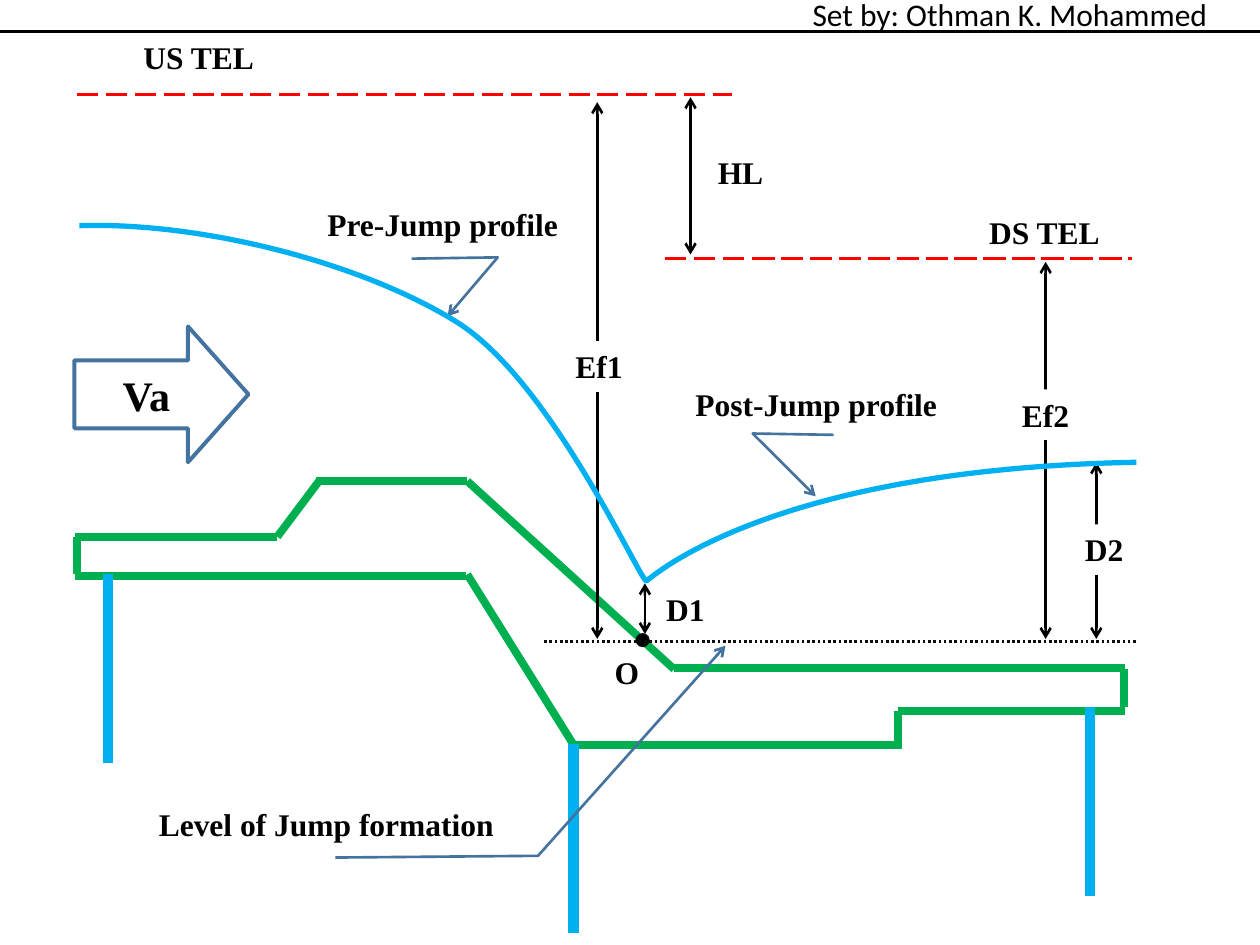
import pptx
import pptx.util
import pptx.dml.color
import pptx.enum.dml
import pptx.enum.shapes
import pptx.enum.text
import pptx.oxml
import pptx.oxml.ns

Cm, Pt = pptx.util.Cm, pptx.util.Pt
Dash = pptx.enum.dml.MSO_LINE
Kind = pptx.enum.shapes.MSO_SHAPE
Align = pptx.enum.text.PP_ALIGN
Anchor = pptx.enum.text.MSO_ANCHOR

GREEN, BLUE, RED, BLACK = "00B050", "00B0F0", "FF0000", "000000"
NAVY, DARK, WHITE = "43739E", "0D0D0D", "FFFFFF"
SERIF = "Times New Roman"
HIGH = 1.02

floor = [
    (1.52, 10.82, 5.59, 10.82), (6.38, 9.7, 9.42, 9.7),
    (13.59, 13.46, 22.68, 13.46), (5.59, 10.82, 6.43, 9.7),
    (13.59, 13.49, 9.42, 9.7), (1.52, 11.61, 9.4, 11.61),
    (11.56, 15.01, 18.16, 15.01), (11.56, 15.01, 9.42, 11.58),
    (18.11, 14.33, 22.68, 14.33), (1.55, 10.82, 1.55, 11.58),
    (18.11, 14.33, 18.11, 15.09), (22.66, 13.49, 22.66, 14.25),
]
piles = [(2.18, 11.58), (11.56, 14.99), (21.97, 14.25)]
levels = [(1.55, 14.76, 1.9), (15.19, 22.81, 5.21), (13.41, 22.81, 5.21)]
spans = [(13.92, 1.96, 5.13), (13, 11.76, 12.78), (22.1, 9.32, 12.88),
         (12.04, 2.06, 12.88), (21.08, 5.28, 12.88)]
labels = [("US TEL", 2.64, 0.64, 2.77), ("HL", 14.22, 2.97, 1.45),
          ("DS TEL", 19.69, 4.17, 2.77), ("D1", 13.18, 11.76, 1.3),
          ("O", 12.14, 13.03, 1.02)]
plates = [("D2", 21.62, 10.57, 1.3), ("Ef1", 11.35, 6.88, 1.47),
          ("Ef2", 20.35, 7.85, 1.47)]
notes = [
    ("Pre-Jump profile", (6.35, 3.99, 6.05, 1.07),
     (1.145, 0.322, 1.121, 0.609, 2.23, 0.442), Align.LEFT, 0.13),
    ("Post-Jump profile", (13.77, 7.62, 6.05, 1.07),
     (1.072, 0.502, 1.047, 0.232, 2.23, 0.442), Align.LEFT, 0.13),
    ("Level of Jump formation", (1.5, 16.08, 10.16, 1.78),
     (0.679, 0.518, 0.659, 0.92, -1.721, 1.292), Align.CENTER, 0.85),
]
curve = [(1.6, 4.55), (4.09, 4.47), (7.32, 5.31), (9.22, 6.5),
         (11.13, 7.7), (12.93, 11.76), (13.03, 11.71),
         (13.13, 11.66), (15.47, 9.45), (22.91, 9.32)]

deck = pptx.Presentation()
deck.slide_width, deck.slide_height = Cm(25.4), Cm(19.05)
slide = deck.slides.add_slide(deck.slide_layouts[6])
shapes = slide.shapes


def rgb(code):
    return pptx.dml.color.RGBColor.from_string(code)


def add(node, tag, **attrs):
    child = pptx.oxml.parse_xml(f"<{tag} {pptx.oxml.ns.nsdecls('a')}/>")
    for key, val in attrs.items():
        child.set(key, val)
    node.append(child)
    return child


def pen(item, color, width, dash=None, ends=()):
    item.line.color.rgb = rgb(color)
    item.line.width = Pt(width)
    if dash:
        item.line.dash_style = dash
    for end in ends:
        add(item.line._get_or_add_ln(), f"a:{end}End", type="arrow")


def line(x1, y1, x2, y2, *look):
    kind = pptx.enum.shapes.MSO_CONNECTOR.STRAIGHT
    item = shapes.add_connector(kind, Cm(x1), Cm(y1), Cm(x2), Cm(y2))
    pen(item, *look)
    add(item._element.spPr, "a:effectLst")


def shape(kind, box, fill=None):
    item = shapes.add_shape(kind, *map(Cm, box))
    item.shadow.inherit = False
    if fill:
        item.fill.solid()
        item.fill.fore_color.rgb = rgb(fill)
    else:
        item.fill.background()
    item.line.fill.background()
    return item


def write(item, text, size=18, face=SERIF, bold=True, align=Align.LEFT,
          anchor=Anchor.TOP, wrap=True):
    frame = item.text_frame
    frame.word_wrap = wrap
    frame.vertical_anchor = anchor
    para = frame.paragraphs[0]
    para.text = text
    para.alignment = align
    font = para.font
    font.name, font.size, font.bold = face, Pt(size), bold
    font.color.rgb = rgb(BLACK)


for ends in floor:
    line(*ends, GREEN, 4.5)
for x, y in piles:
    line(x, y, x, y + 3.81, BLUE, 6)
for x1, x2, y in levels:
    line(x1, y, x2, y, RED, 1.5, Dash.LONG_DASH)
for x, y1, y2 in spans:
    line(x, y1, x, y2, BLACK, 1.5, None, ("head", "tail"))

for text, x, y, wide in labels:
    write(shapes.add_textbox(Cm(x), Cm(y), Cm(wide), Cm(HIGH)), text, wrap=False)
for text, x, y, wide in plates:
    write(shape(Kind.RECTANGLE, (x, y, wide, HIGH), WHITE), text, wrap=False)

dot = shape(Kind.OVAL, (12.83, 12.78, 0.25, 0.25), BLACK)
pen(dot, DARK, 1)
line(10.97, 12.93, 22.91, 12.93, DARK, 1.5, Dash.ROUND_DOT)

for text, box, bends, align, base in notes:
    note = shape(Kind.LINE_CALLOUT_2_NO_BORDER, box)
    for i, bend in enumerate(bends):
        note.adjustments[i] = bend
    pen(note, NAVY, 1.5, None, ("tail",))
    write(note, text, align=align, anchor=Anchor.MIDDLE)
    note.text_frame.margin_bottom = Cm(base)

pts = [(Cm(x), Cm(y)) for x, y in curve]
form = shapes.build_freeform(*pts[0])
form.add_line_segments(pts[1:], close=False)
water = form.convert_to_shape()
water.shadow.inherit = False
water.fill.background()
pen(water, BLUE, 3)
track = water._element.find(".//" + pptx.oxml.ns.qn("a:path"))
steps = list(track)[1:]
for i in range(0, len(steps), 3):
    bend = add(track, "a:cubicBezTo")
    for step in steps[i:i + 3]:
        bend.append(step[0])
        track.remove(step)

flow = shape(Kind.RIGHT_ARROW, (1.5, 6.58, 3.51, 2.74))
flow.adjustments[1] = 0.445
pen(flow, NAVY, 2.25)
write(flow, "Va", 24, align=Align.CENTER, anchor=Anchor.MIDDLE)

head = shapes.add_textbox(Cm(15.65), Cm(-0.23), Cm(8.94), Cm(HIGH))
write(head, "Set by: Othman K. Mohammed", face="Calibri", bold=False,
      align=Align.RIGHT)
line(0, 0.64, 25.4, 0.64, BLACK, 1.5)

deck.save("out.pptx")
